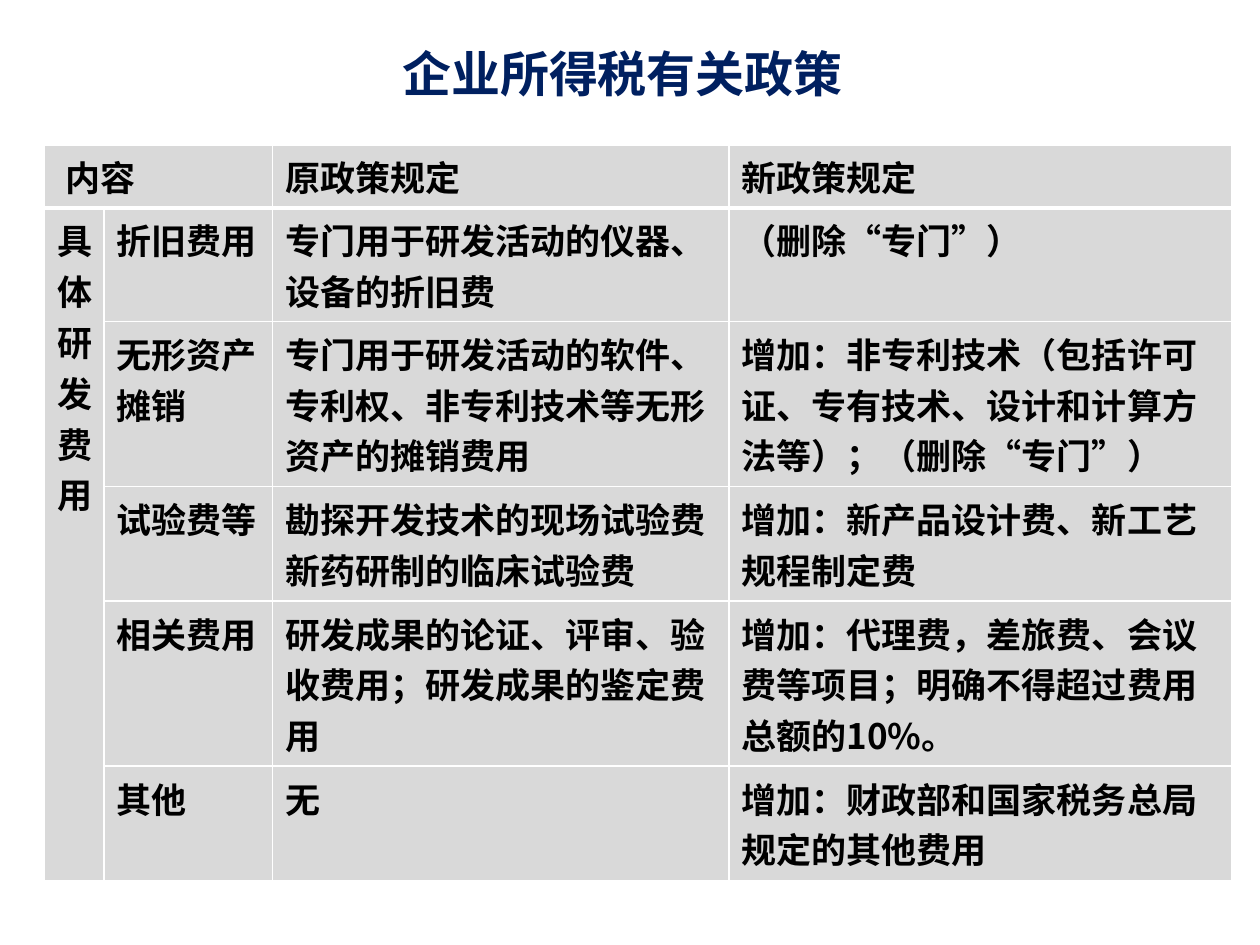
import pptx
import pptx.util
import pptx.dml.color
import pptx.enum.text
import pptx.oxml.ns
from lxml import etree

Inches = pptx.util.Inches
TABLE_FONT = "Noto Sans CJK SC"
COLUMN_WIDTHS = [0.47, 1.34, 3.62, 3.99]
ROW_HEIGHTS = [0.5, 0.9, 1.31, 0.91, 1.31, 0.91]

# One list per table row; None marks a cell covered by a merge
POLICY_ROWS = [
    [" 内容", None, "原政策规定", "新政策规定"],
    ["具体研发费用", "折旧费用", "专门用于研发活动的仪器、设备的折旧费", "（删除“专门”）"],
    [None, "无形资产摊销", "专门用于研发活动的软件、专利权、非专利技术等无形资产的摊销费用",
     "增加：非专利技术（包括许可证、专有技术、设计和计算方法等）；（删除“专门”）"],
    [None, "试验费等", "勘探开发技术的现场试验费\n新药研制的临床试验费",
     "增加：新产品设计费、新工艺规程制定费"],
    [None, "相关费用", "研发成果的论证、评审、验收费用；研发成果的鉴定费用",
     "增加：代理费，差旅费、会议费等项目；明确不得超过费用总额的10%。"],
    [None, "其他", "无", "增加：财政部和国家税务总局规定的其他费用"],
]


def color(hex_value):
    return pptx.dml.color.RGBColor.from_string(hex_value)


def add_run(paragraph, text, size, font_name, hex_value):
    run = paragraph.add_run()
    run.text = text
    font = run.font
    font.size = pptx.util.Pt(size)
    font.name = font_name
    font.bold = True
    font.color.rgb = color(hex_value)
    return run


def set_east_asian_font(run, font_name):
    properties = run.font._element
    etree.SubElement(properties, pptx.oxml.ns.qn("a:ea"), typeface=font_name)


def add_border(cell, side, width):
    qn = pptx.oxml.ns.qn
    properties = cell._tc.get_or_add_tcPr()
    line = etree.SubElement(properties, qn("a:ln" + side), w=str(pptx.util.Pt(width)))
    fill = etree.SubElement(line, qn("a:solidFill"))
    etree.SubElement(fill, qn("a:srgbClr"), val="FFFFFF")


def style_cell(cell, row_index):
    # A thick rule separates the header from the body
    widths = {"L": 1, "R": 1, "T": 3 if row_index == 1 else 1, "B": 3 if row_index == 0 else 1}
    for side, width in widths.items():
        add_border(cell, side, width)
    cell.fill.solid()
    cell.fill.fore_color.rgb = color("D9D9D9")


def fill_cell(cell, text):
    frame = cell.text_frame
    for index, line in enumerate(text.split("\n")):
        paragraph = frame.add_paragraph() if index else frame.paragraphs[0]
        run = add_run(paragraph, line, 20, TABLE_FONT, "000000")
        set_east_asian_font(run, TABLE_FONT)


def add_title(slide, text):
    shape = slide.shapes.add_textbox(Inches(0.5), Inches(0.3), Inches(8.88), Inches(0.56))
    frame = shape.text_frame
    frame.word_wrap = True
    frame.vertical_anchor = pptx.enum.text.MSO_ANCHOR.MIDDLE
    paragraph = frame.paragraphs[0]
    paragraph.alignment = pptx.enum.text.PP_ALIGN.CENTER
    add_run(paragraph, text, 28, "Calibri", "002060")


def add_policy_table(slide):
    table = slide.shapes.add_table(
        len(ROW_HEIGHTS), len(COLUMN_WIDTHS), Inches(0.355), Inches(1.15),
        Inches(sum(COLUMN_WIDTHS)), Inches(sum(ROW_HEIGHTS))).table
    for column, width in zip(table.columns, COLUMN_WIDTHS):
        column.width = Inches(width)
    for row, height in zip(table.rows, ROW_HEIGHTS):
        row.height = Inches(height)

    # Header spans two columns; the category spans all body rows
    table.cell(0, 0).merge(table.cell(0, 1))
    table.cell(1, 0).merge(table.cell(5, 0))

    for row_index, texts in enumerate(POLICY_ROWS):
        for column_index, text in enumerate(texts):
            cell = table.cell(row_index, column_index)
            style_cell(cell, row_index)
            if text is not None:
                fill_cell(cell, text)


def main():
    presentation = pptx.Presentation()
    presentation.slide_width = Inches(10)
    presentation.slide_height = Inches(7.5)
    slide = presentation.slides.add_slide(presentation.slide_layouts[6])
    add_title(slide, "企业所得税有关政策")
    add_policy_table(slide)
    presentation.save("out.pptx")


if __name__ == "__main__":
    main()
